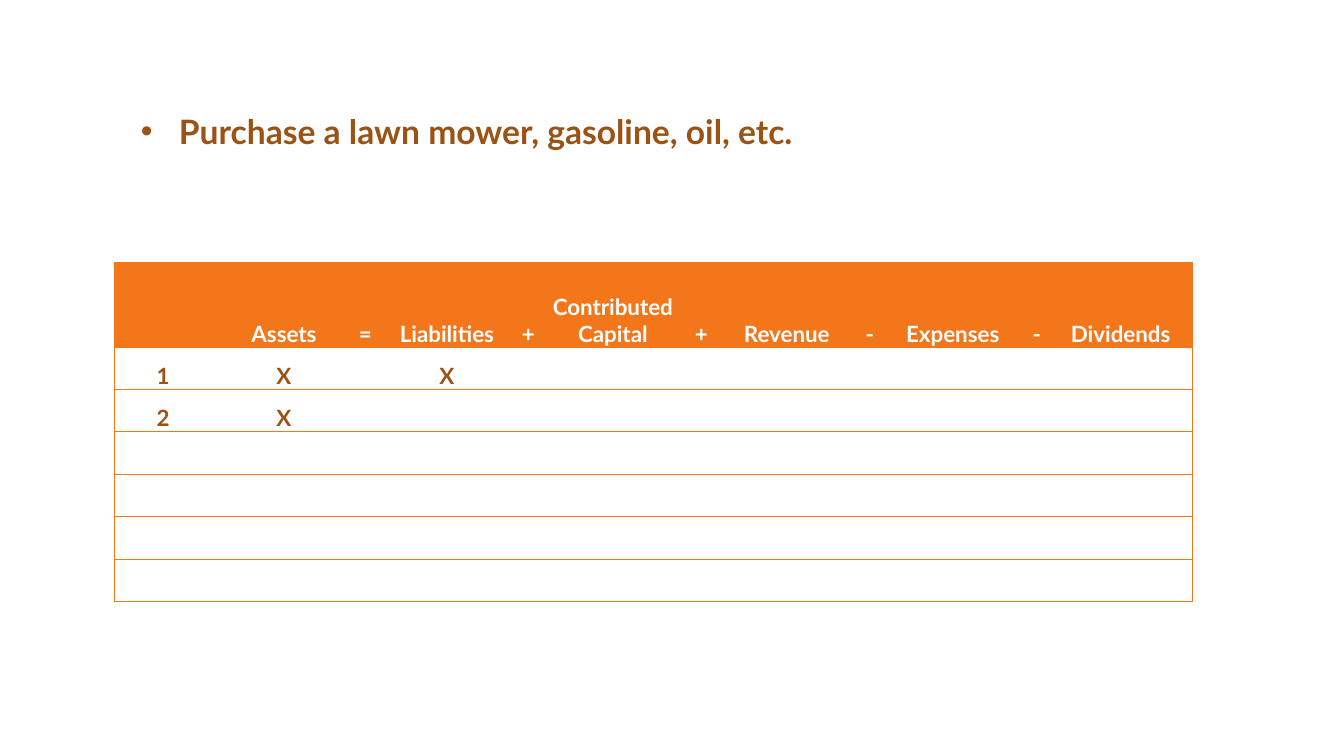
from lxml.etree import SubElement
from pptx import Presentation
from pptx.dml.color import RGBColor
from pptx.enum.text import MSO_ANCHOR, PP_ALIGN
from pptx.oxml.ns import qn
from pptx.util import Pt

# Content
BULLET = "Purchase a lawn mower, gasoline, oil, etc."
HEADER = ["", "Assets", "=", "Liabilities", "+", "Contributed Capital", "+",
          "Revenue", "-", "Expenses", "-", "Dividends"]
ENTRIES = [
    ["1", "X", "", "X"],
    ["2", "X"],
    [], [], [], [],
]

# Look and layout, in px
COLORS = {"orange": "F3771A", "brown": "9A5315", "white": "FFFFFF"}
FONT = "Lato"
SCALE = 914400 / 100.8
SLIDE_SIZE = (1344, 756)
BULLET_BOX = (131, 106, 1109, 585)
BULLET_INDENT = 38
TABLE_LEFT, TABLE_TOP = 114, 262
COLUMN_WIDTHS = [98, 144, 19, 144, 19, 150, 27, 144, 22, 144, 24, 144]
ROW_HEIGHTS = [85, 42, 42, 43, 42, 43, 42]
NO_GRID_STYLE = "{2D5ABB26-0587-4C30-8999-92F81FD0307C}"


def px(value):
    return round(value * SCALE)


def add_text(paragraph, text, size, color):
    run = paragraph.add_run()
    run.text = text
    run.font.name = FONT
    run.font.size = Pt(size)
    run.font.bold = True
    run.font.color.rgb = RGBColor.from_string(COLORS[color])


def add_borders(cell, sides):
    properties = cell._tc.get_or_add_tcPr()
    for side in sides:
        line = SubElement(properties, qn(f"a:ln{side}"), w=str(Pt(0.5)))
        fill = SubElement(line, qn("a:solidFill"))
        SubElement(fill, qn("a:srgbClr"), val=COLORS["orange"])


def add_bullet_text(slide):
    frame = slide.shapes.add_textbox(*map(px, BULLET_BOX)).text_frame
    frame.word_wrap = True
    paragraph = frame.paragraphs[0]
    properties = paragraph._p.get_or_add_pPr()
    properties.set("marL", str(px(BULLET_INDENT)))
    properties.set("indent", str(-px(BULLET_INDENT)))
    SubElement(properties, qn("a:buFont"), typeface="Arial")
    SubElement(properties, qn("a:buChar"), char="•")
    add_text(paragraph, BULLET, 24, "brown")


def add_equation_table(slide):
    rows = [HEADER] + ENTRIES
    last_column = len(HEADER) - 1
    table = slide.shapes.add_table(
        len(rows), len(HEADER), px(TABLE_LEFT), px(TABLE_TOP),
        px(sum(COLUMN_WIDTHS)), px(sum(ROW_HEIGHTS))).table
    table.first_row = True
    table.horz_banding = False
    table._tbl.tblPr.find(qn("a:tableStyleId")).text = NO_GRID_STYLE

    for column, width in zip(table.columns, COLUMN_WIDTHS):
        column.width = px(width)
    for row, height in zip(table.rows, ROW_HEIGHTS):
        row.height = px(height)

    for row_index, row in enumerate(rows):
        is_header = row_index == 0
        for column_index in range(len(HEADER)):
            cell = table.cell(row_index, column_index)
            cell.vertical_anchor = MSO_ANCHOR.BOTTOM
            cell.margin_left = cell.margin_right = cell.margin_top = px(1)
            cell.margin_bottom = 0

            # Outer frame and row lines only
            left = "L" if column_index == 0 else ""
            right = "R" if column_index == last_column else ""
            add_borders(cell, left + right + "TB")
            if is_header:
                cell.fill.solid()
                cell.fill.fore_color.rgb = RGBColor.from_string(COLORS["orange"])
            else:
                cell.fill.background()

            text = row[column_index] if column_index < len(row) else ""
            if text:
                paragraph = cell.text_frame.paragraphs[0]
                paragraph.alignment = PP_ALIGN.CENTER
                add_text(paragraph, text, 16, "white" if is_header else "brown")


def main():
    presentation = Presentation()
    presentation.slide_width, presentation.slide_height = map(px, SLIDE_SIZE)
    slide = presentation.slides.add_slide(presentation.slide_layouts[6])
    add_bullet_text(slide)
    add_equation_table(slide)
    presentation.save("out.pptx")


if __name__ == "__main__":
    main()
